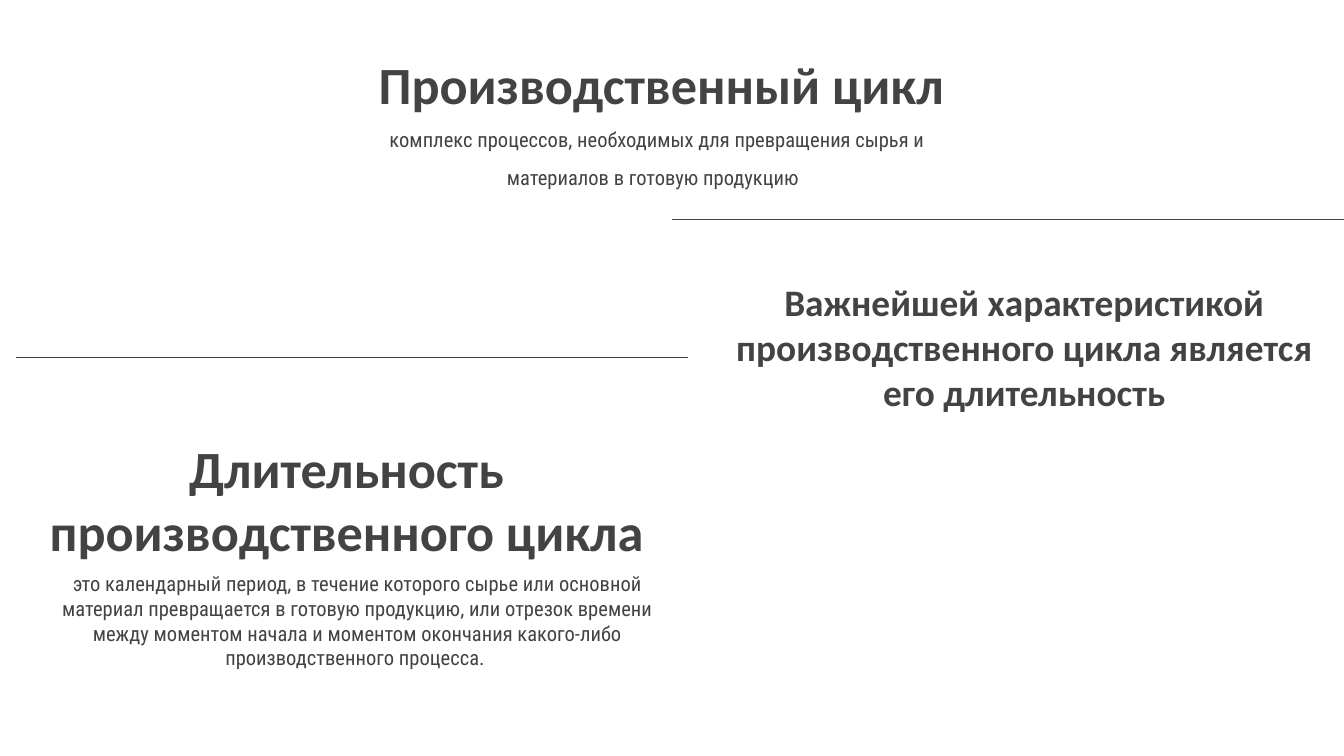
from lxml import etree
from pptx import Presentation, util as u
from pptx.dml.color import RGBColor
from pptx.enum import shapes, text
from pptx.oxml.ns import qn

INK = RGBColor(0x43, 0x43, 0x43)
WHITE = RGBColor(0xFF, 0xFF, 0xFF)

deck = Presentation()
deck.slide_width = u.Inches(10)
deck.slide_height = deck.slide_width * 9 // 16
slide = deck.slides.add_slide(deck.slide_layouts[6])
slide.background.fill.solid()
slide.background.fill.fore_color.rgb = WHITE

column = deck.slide_width / 100
row = deck.slide_height / 100


def style(run, font_name, size, bold=False):
    run.font.name = font_name
    run.font.size = u.Pt(size)
    run.font.bold = bold
    run.font.color.rgb = INK


def add_words(words, left, top, width, height, anchor, font_name, size, bold):
    box = slide.shapes.add_textbox(
        int(left * column), int(top * row), int(width * column), int(height * row))
    frame = box.text_frame
    frame.word_wrap = True
    frame.vertical_anchor = anchor
    frame.margin_left = frame.margin_right = u.Inches(0.1)
    frame.margin_top = frame.margin_bottom = u.Inches(0.1)
    frame.text = words
    paragraph = frame.paragraphs[0]
    paragraph.alignment = text.PP_ALIGN.CENTER
    style(paragraph.runs[0], font_name, size, bold)
    return paragraph


headings = [
    ("Производственный цикл", 25.64, 4.05, 28),
    ("Длительность производственного цикла", 2.23, 63.1, 28),
    ("Важнейшей характеристикой производственного цикла является его длительность",
     52.67, 43.55, 20),
]
for words, left, top, size in headings:
    add_words(words, left, top, 47.1, 13, text.MSO_ANCHOR.BOTTOM, "Calibri", size, True)

definitions = [
    ("комплекс процессов, необходимых для превращения сырья и материалов "
     "в готовую продукцию", 25.8, 15, 9.8),
    ("это календарный период, в течение которого сырье или основной материал "
     "превращается в готовую продукцию, или отрезок времени между моментом начала "
     "и моментом окончания какого-либо производственного процесса. ", 3.5, 73.8, 34.7),
]
cycle, duration = [
    add_words(words, left, top, 46.2, height, text.MSO_ANCHOR.TOP,
              "Roboto Condensed", 11, False)
    for words, left, top, height in definitions
]
closing_space = cycle.add_run()
closing_space.text = " "
style(closing_space, "Times New Roman", 18)

for left, top in [(50, 29), (1.2, 47.3)]:
    divider = slide.shapes.add_connector(
        shapes.MSO_CONNECTOR.STRAIGHT, int(left * column), int(top * row),
        int((left + 50) * column), int(top * row))
    divider.line.color.rgb = INK
    divider.line.width = u.Pt(0.75)
    etree.SubElement(divider._element.spPr, qn("a:effectLst"))

deck.save("out.pptx")
